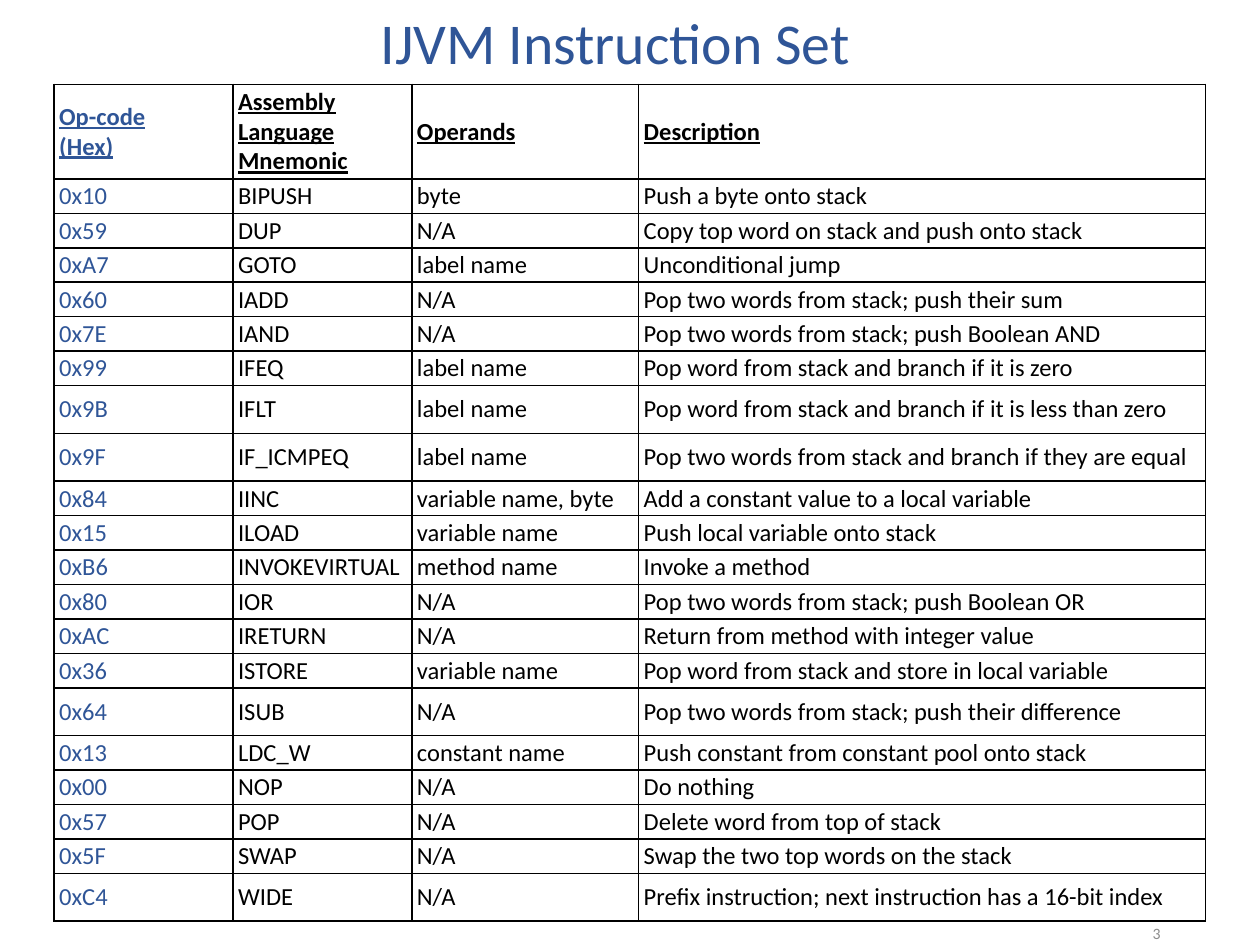
from lxml.etree import SubElement
from pptx import Presentation
from pptx.dml.color import RGBColor
from pptx.enum.text import MSO_ANCHOR as Anchor, PP_ALIGN as Align
from pptx.oxml.ns import qn
from pptx.util import Inches, Pt

BLUE = RGBColor(0x2F, 0x55, 0x97)
BLACK = RGBColor(0, 0, 0)
GRAY = RGBColor(0x8C, 0x8C, 0x8C)
FONT = "Calibri"

COLUMN_WIDTHS = [1.42, 1.42, 1.8, 4.5]
HEADER_HEIGHT, ROW_HEIGHT, TALL_HEIGHT = 0.75, 0.27, 0.38
TALL_MNEMONICS = {"IFLT", "IF_ICMPEQ", "ISUB", "WIDE"}
HEADER = ("Op-code\v(Hex)", "Assembly\vLanguage\vMnemonic", "Operands", "Description")
INSTRUCTIONS = [
    ("0x10", "BIPUSH", "byte", "Push a byte onto stack"),
    ("0x59", "DUP", "N/A", "Copy top word on stack and push onto stack"),
    ("0xA7", "GOTO", "label name", "Unconditional jump"),
    ("0x60", "IADD", "N/A", "Pop two words from stack; push their sum"),
    ("0x7E", "IAND", "N/A", "Pop two words from stack; push Boolean AND"),
    ("0x99", "IFEQ", "label name", "Pop word from stack and branch if it is zero"),
    ("0x9B", "IFLT", "label name", "Pop word from stack and branch if it is less than zero"),
    ("0x9F", "IF_ICMPEQ", "label name", "Pop two words from stack and branch if they are equal"),
    ("0x84", "IINC", "variable name, byte", "Add a constant value to a local variable"),
    ("0x15", "ILOAD", "variable name", "Push local variable onto stack"),
    ("0xB6", "INVOKEVIRTUAL", "method name", "Invoke a method"),
    ("0x80", "IOR", "N/A", "Pop two words from stack; push Boolean OR"),
    ("0xAC", "IRETURN", "N/A", "Return from method with integer value"),
    ("0x36", "ISTORE", "variable name", "Pop word from stack and store in local variable"),
    ("0x64", "ISUB", "N/A", "Pop two words from stack; push their difference"),
    ("0x13", "LDC_W", "constant name", "Push constant from constant pool onto stack"),
    ("0x00", "NOP", "N/A", "Do nothing"),
    ("0x57", "POP", "N/A", "Delete word from top of stack"),
    ("0x5F", "SWAP", "N/A", "Swap the two top words on the stack"),
    ("0xC4", "WIDE", "N/A", "Prefix instruction; next instruction has a 16-bit index"),
]


def style_paragraph(para, size, color, align=Align.LEFT, heading=False):
    para.alignment = align
    font = para.font
    font.name, font.size = FONT, Pt(size)
    font.color.rgb = color
    font.bold = font.underline = heading


def add_title(page, text):
    title = page.shapes.title
    title.left, title.top = Inches(0.21), Inches(0.06)
    title.width, title.height = Inches(9.35), Inches(0.61)
    frame = title.text_frame
    frame.text = text
    frame.vertical_anchor = Anchor.MIDDLE
    para = frame.paragraphs[0]
    para.line_spacing = 0.9
    style_paragraph(para, 33, BLUE, Align.CENTER)


def add_page_number(page, number):
    box = page.shapes.add_textbox(Inches(7.06), Inches(7.33), Inches(2.25), Inches(0.16))
    frame = box.text_frame
    frame.word_wrap = True
    frame.vertical_anchor = Anchor.MIDDLE
    frame.margin_top = frame.margin_bottom = 0
    frame.text = number
    style_paragraph(frame.paragraphs[0], 9, GRAY, Align.RIGHT)


def add_borders(cell):
    properties = cell._tc.get_or_add_tcPr()
    for index, side in enumerate(("a:lnL", "a:lnR", "a:lnT", "a:lnB")):
        line = SubElement(properties, qn(side), w=str(Pt(1)))
        fill = SubElement(line, qn("a:solidFill"))
        SubElement(fill, qn("a:srgbClr"), val=str(BLACK))
        properties.insert(index, line)


def fill_cell(cell, text, color, heading):
    cell.text = text
    cell.vertical_anchor = Anchor.MIDDLE
    cell.margin_left = cell.margin_right = Inches(0.04)
    cell.margin_top = cell.margin_bottom = Inches(0.02)
    cell.fill.background()
    add_borders(cell)
    style_paragraph(cell.text_frame.paragraphs[0], 14, color, heading=heading)


def add_instruction_table(page):
    rows = [HEADER] + INSTRUCTIONS
    heights = [HEADER_HEIGHT] + [
        TALL_HEIGHT if mnemonic in TALL_MNEMONICS else ROW_HEIGHT
        for _, mnemonic, _, _ in INSTRUCTIONS
    ]
    table = page.shapes.add_table(
        len(rows), len(COLUMN_WIDTHS), Inches(0.43), Inches(0.67),
        Inches(sum(COLUMN_WIDTHS)), Inches(sum(heights)),
    ).table
    table.first_row = table.horz_banding = False
    for column, width in zip(table.columns, COLUMN_WIDTHS):
        column.width = Inches(width)
    for r, (texts, height) in enumerate(zip(rows, heights)):
        table.rows[r].height = Inches(height)
        for c, text in enumerate(texts):
            fill_cell(table.cell(r, c), text, BLACK if c else BLUE, heading=r == 0)


def main():
    deck = Presentation()
    deck.slide_width, deck.slide_height = Inches(10), Inches(7.5)
    page = deck.slides.add_slide(deck.slide_layouts[5])
    add_title(page, "IJVM Instruction Set")
    add_page_number(page, "3")
    add_instruction_table(page)
    deck.save("out.pptx")


if __name__ == "__main__":
    main()
